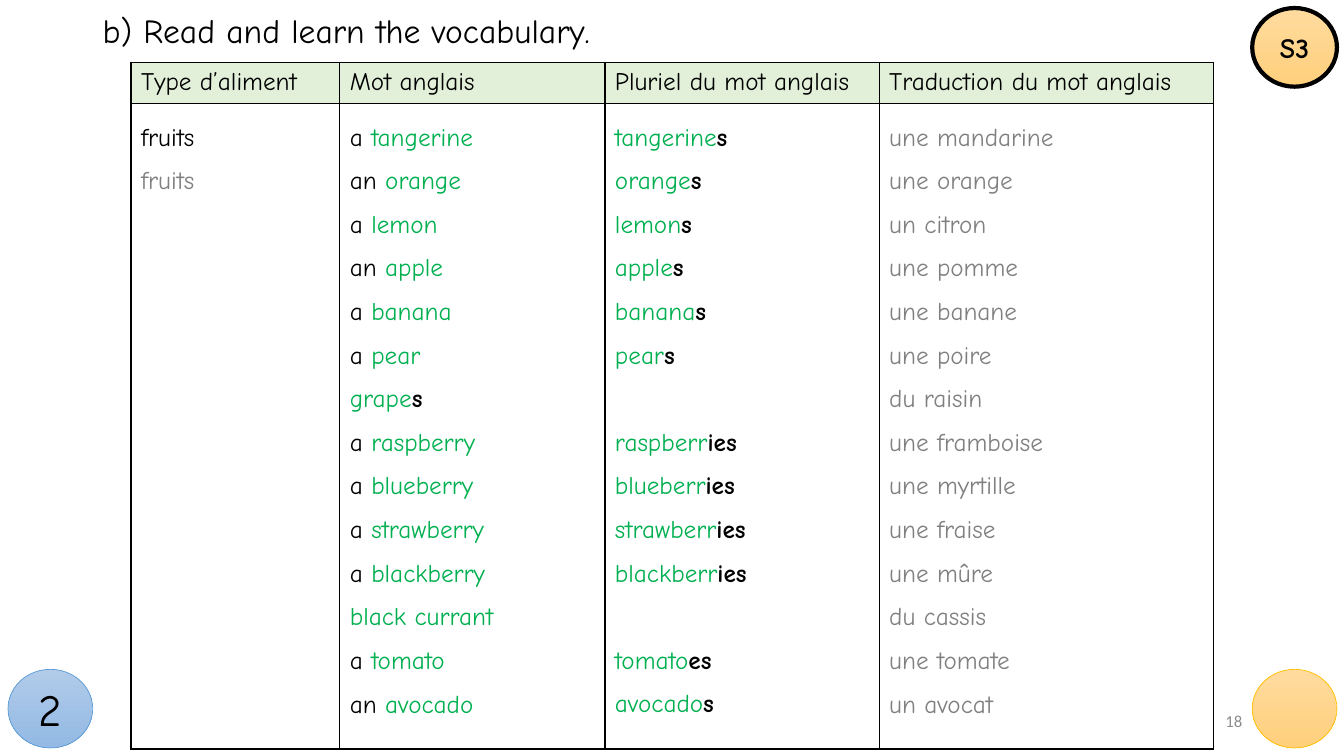
from lxml.etree import SubElement
from pptx import Presentation
from pptx.dml.color import RGBColor
from pptx.enum.shapes import MSO_SHAPE
from pptx.enum.text import MSO_ANCHOR, PP_ALIGN
from pptx.oxml.ns import qn
from pptx.util import Inches, Pt

TITLE = "b) Read and learn the vocabulary."
PAGE = "18"
HEADS = ["Type d’aliment", "Mot anglais", "Pluriel du mot anglais",
         "Traduction du mot anglais"]
KINDS = [("fruits", "ink"), ("fruits", "grey")]
FOODS = [
    (("a ", "tangerine", ""), ("tangerine", "s"), "une mandarine"),
    (("an ", "orange", ""), ("orange", "s"), "une orange"),
    (("a ", "lemon", ""), ("lemon", "s"), "un citron"),
    (("an ", "apple", ""), ("apple", "s"), "une pomme"),
    (("a ", "banana", ""), ("banana", "s"), "une banane"),
    (("a ", "pear", ""), ("pear", "s"), "une poire"),
    (("", "grape", "s"), None, "du raisin"),
    (("a ", "raspberry", ""), ("raspberr", "ies"), "une framboise"),
    (("a ", "blueberry", ""), ("blueberr", "ies"), "une myrtille"),
    (("a ", "strawberry", ""), ("strawberr", "ies"), "une fraise"),
    (("a ", "blackberry", ""), ("blackberr", "ies"), "une mûre"),
    (("", "black currant", ""), None, "du cassis"),
    (("a ", "tomato", ""), ("tomato", "es"), "une tomate"),
    (("an ", "avocado", ""), ("avocado", "s"), "un avocat"),
]
BADGES = [
    (12.42, 6.64, "sun", "gold", 0.5, "", 20, False),
    (12.42, 0.08, "sun", "ink", 3, "S3", 20, True),
    (0.08, 6.64, "sky", "blue", 0.5, "2", 32, False),
]
WIDTHS = [2.07, 2.63, 2.72, 3.32]
HEIGHTS = [0.41, 6.15]

THEME = {
    "ink": "000000", "green": "00B050", "grey": "808080", "pale": "8C8C8C",
    "head": "E2F0D9", "gold": "FFC000", "blue": "5B9BD5",
    "sun": ("FFDB9E", "FFD07C"), "sky": ("B1CBE9", "93B9E4"),
    "font": "Comic Neue", "plain": "Calibri",
    "title": 24, "body": 18, "page": 12, "gap": 31.1,
}


def tint(name):
    return RGBColor.from_string(THEME[name])


def write(para, parts, size=THEME["body"], font=THEME["font"]):
    for text, color, bold in parts:
        if text:
            run = para.add_run()
            run.text = text
            run.font.size = Pt(size)
            run.font.name = font
            run.font.bold = bold
            run.font.color.rgb = tint(color)


def label(slide, box, parts, size, font, align):
    frame = slide.shapes.add_textbox(*map(Inches, box)).text_frame
    frame.word_wrap = True
    frame.vertical_anchor = MSO_ANCHOR.MIDDLE
    para = frame.paragraphs[0]
    para.alignment = align
    write(para, parts, size, font)
    return para


def border(cell):
    props = cell._tc.get_or_add_tcPr()
    for i, side in enumerate(("lnL", "lnR", "lnT", "lnB")):
        line = SubElement(props, qn(f"a:{side}"), w=str(Pt(1)))
        fill = SubElement(line, qn("a:solidFill"))
        SubElement(fill, qn("a:srgbClr"), val=THEME["ink"])
        props.insert(i, line)


def fill_list(cell, lines):
    frame = cell.text_frame
    skip = 0
    first = True
    for parts in lines:
        if parts is None:
            skip += 1
            continue
        para = frame.paragraphs[0] if first else frame.add_paragraph()
        para.line_spacing = 1.5
        if skip:
            para.space_before = Pt(skip * THEME["gap"])
        write(para, parts)
        first, skip = False, 0


def add_words(slide):
    table = slide.shapes.add_table(
        2, len(HEADS), Inches(1.3), Inches(0.62),
        Inches(sum(WIDTHS)), Inches(sum(HEIGHTS))).table
    table.first_row = table.horz_banding = False
    for col, width in zip(table.columns, WIDTHS):
        col.width = Inches(width)
    for row, height in zip(table.rows, HEIGHTS):
        row.height = Inches(height)
    for i, head in enumerate(HEADS):
        cell = table.cell(0, i)
        cell.fill.solid()
        cell.fill.fore_color.rgb = tint("head")
        write(cell.text_frame.paragraphs[0], [(head, "ink", False)])
        table.cell(1, i).fill.background()
    lists = [
        [[(kind, color, False)] for kind, color in KINDS],
        [[(art, "ink", False), (stem, "green", False), (end, "ink", True)]
         for (art, stem, end), _, _ in FOODS],
        [many and [(many[0], "green", False), (many[1], "ink", True)]
         for _, many, _ in FOODS],
        [[(french, "grey", False)] for _, _, french in FOODS],
    ]
    for i, lines in enumerate(lists):
        fill_list(table.cell(1, i), lines)
    for cell in table.iter_cells():
        border(cell)


def add_badge(slide, left, top, shade, edge, weight, text, size, bold):
    disc = slide.shapes.add_shape(
        MSO_SHAPE.OVAL, Inches(left), Inches(top), Inches(0.84), Inches(0.78))
    disc.shadow.inherit = False
    disc.fill.gradient()
    disc.fill.gradient_angle = 270
    for stop, color, place in zip(disc.fill.gradient_stops, THEME[shade], (0, 1)):
        stop.color.rgb = RGBColor.from_string(color)
        stop.position = place
    disc.line.color.rgb = tint(edge)
    disc.line.width = Pt(weight)
    frame = disc.text_frame
    frame.vertical_anchor = MSO_ANCHOR.MIDDLE
    frame.paragraphs[0].alignment = PP_ALIGN.CENTER
    write(frame.paragraphs[0], [(text, "ink", bold)], size)


def main():
    deck = Presentation()
    deck.slide_width, deck.slide_height = Inches(13.33), Inches(7.5)
    slide = deck.slides.add_slide(deck.slide_layouts[6])
    title = label(slide, (0.92, 0, 11.5, 0.65), [(TITLE, "ink", False)],
                  THEME["title"], THEME["font"], PP_ALIGN.LEFT)
    title.line_spacing = 0.9
    add_words(slide)
    for badge in BADGES:
        add_badge(slide, *badge)
    label(slide, (9.42, 6.95, 3, 0.4), [(PAGE, "pale", False)],
          THEME["page"], THEME["plain"], PP_ALIGN.RIGHT)
    deck.save("out.pptx")


if __name__ == "__main__":
    main()
